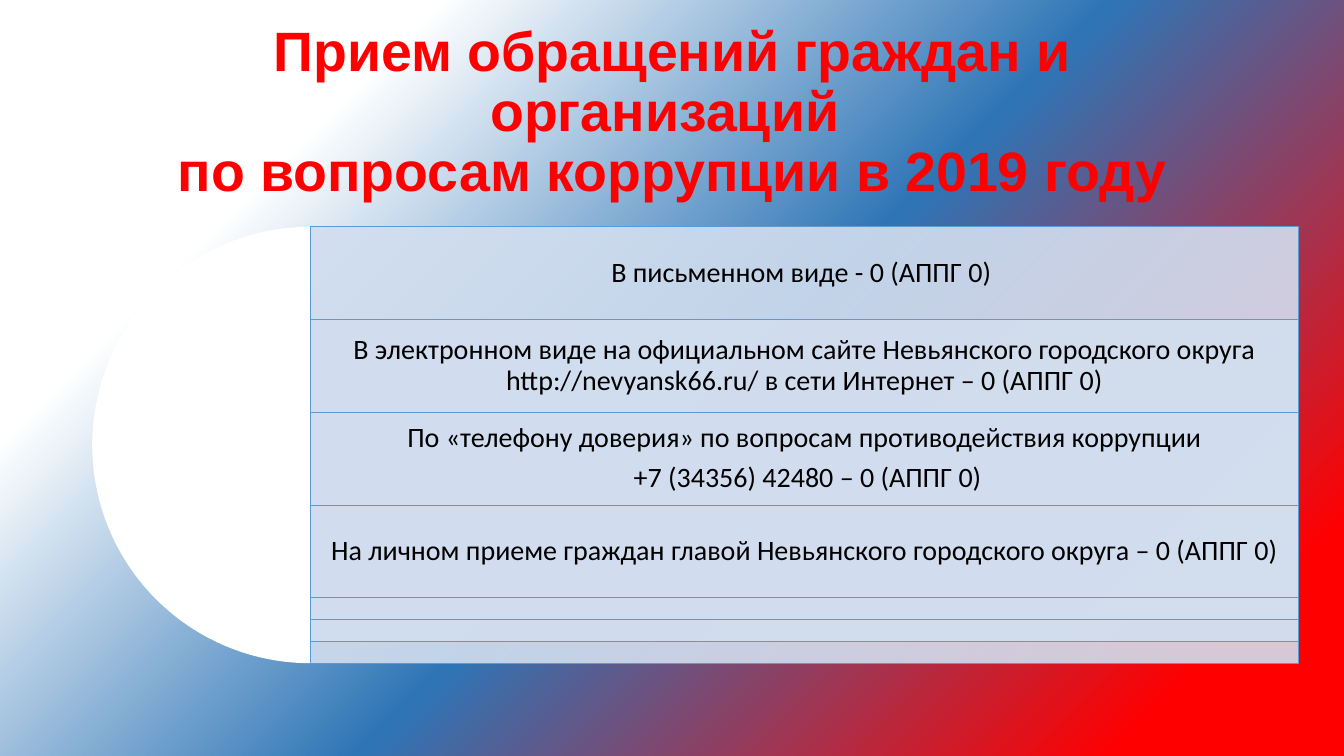
from lxml import etree
from pptx import Presentation
from pptx.dml.color import RGBColor
from pptx.enum.shapes import MSO_SHAPE
from pptx.enum.text import MSO_ANCHOR, MSO_AUTO_SIZE, PP_ALIGN
from pptx.oxml import parse_xml
from pptx.oxml.ns import nsdecls, qn
from pptx.util import Inches, Pt

COLORS = {
    "white": "FFFFFF",
    "blue": "2E75B6",
    "red": "FF0000",
    "band": "D2DEEF",
    "border": "5B9BD5",
    "text": "000000",
}
TITLE = ["Прием обращений граждан и организаций ", "по вопросам коррупции в 2019 году"]
CHANNELS = [
    ["В письменном виде - 0 (АППГ 0) "],
    ["В электронном виде на официальном сайте Невьянского городского округа "
     "http://nevyansk66.ru/ в сети Интернет – 0 (АППГ 0)"],
    ["По «телефону доверия» по вопросам противодействия коррупции",
     " +7 (34356) 42480 – 0 (АППГ 0)"],
    ["На личном приеме граждан главой Невьянского городского округа – 0 (АППГ 0)"],
]


def rgb(name):
    return RGBColor.from_string(COLORS[name])


def place(sp, x, y, w, h):
    sp.left, sp.top, sp.width, sp.height = (Inches(v) for v in (x, y, w, h))


def add_run(p, text, font, size, color, bold=False):
    r = p.add_run()
    r.text = text
    r.font.name = font
    r.font.size = Pt(size)
    r.font.bold = bold
    r.font.color.rgb = rgb(color)


def set_background(s, stops, angle):
    s.background.fill.gradient()
    grad = s.background._cSld.find(".//" + qn("a:gradFill"))
    gs = "".join(
        f'<a:gs pos="{pos * 1000}"><a:srgbClr val="{COLORS[name]}"/></a:gs>'
        for pos, name in stops)
    new = parse_xml(
        f'<a:gradFill {nsdecls("a")} rotWithShape="1"><a:gsLst>{gs}</a:gsLst>'
        f'<a:lin ang="{angle * 60000}" scaled="0"/></a:gradFill>')
    grad.getparent().replace(grad, new)


def add_title(s, x, y, w, h):
    sp = s.shapes.title
    place(sp, x, y, w, h)
    tf = sp.text_frame
    tf.word_wrap = True
    tf.auto_size = MSO_AUTO_SIZE.NONE
    tf.vertical_anchor = MSO_ANCHOR.MIDDLE
    p = tf.paragraphs[0]
    p.alignment = PP_ALIGN.CENTER
    p.line_spacing = 0.9
    for i, line in enumerate(TITLE):
        if i:
            p.add_line_break()
        add_run(p, line, "Arial", 39.6, "red", True)


def add_solid(shapes, kind, color, x, y, w, h):
    sp = shapes.add_shape(kind, *(Inches(v) for v in (x, y, w, h)))
    sp.shadow.inherit = False
    sp.fill.solid()
    sp.fill.fore_color.rgb = rgb(color)
    return sp


def add_half_disc(shapes, center, y, size):
    sp = add_solid(shapes, MSO_SHAPE.PIE, "white", center - size / 2, y, size, size)
    sp.adjustments[0] = 54
    sp.adjustments[1] = 162
    sp.line.fill.background()


def add_band(shapes, x, y, w, h):
    sp = add_solid(shapes, MSO_SHAPE.RECTANGLE, "band", x, y, w, h)
    sp.line.color.rgb = rgb("border")
    sp.line.width = Pt(0.5)
    color = sp._element.spPr.find(qn("a:solidFill"))[0]
    etree.SubElement(color, qn("a:alpha"), val="90000")


def add_label(shapes, lines, x, y, w, h):
    sp = shapes.add_textbox(*(Inches(v) for v in (x, y, w, h)))
    tf = sp.text_frame
    tf.word_wrap = True
    tf.vertical_anchor = MSO_ANCHOR.MIDDLE
    tf.margin_left = tf.margin_right = tf.margin_top = tf.margin_bottom = Inches(0.08)
    for i, line in enumerate(lines):
        p = tf.add_paragraph() if i else tf.paragraphs[0]
        p.alignment = PP_ALIGN.CENTER
        p.line_spacing = 0.9
        p.space_after = Pt(7)
        add_run(p, line, "Calibri", 20, "text")


def add_target_list(s, x, y, w, h, row):
    shapes = s.shapes.add_group_shape().shapes
    shrink = (h - row) / (len(CHANNELS) - 1)
    for i, lines in enumerate(CHANNELS):
        top, size = y + i * row, h - i * shrink
        add_half_disc(shapes, x, top, size)
        add_band(shapes, x, top, w, size)
        add_label(shapes, lines, x, top, w, row)


def main():
    prs = Presentation()
    prs.slide_width, prs.slide_height = Inches(13.33), Inches(7.5)
    s = prs.slides.add_slide(prs.slide_layouts[5])
    set_background(s, [(21, "white"), (53, "blue"), (89, "red")], 45)
    add_title(s, 0.92, 0.4, 11.5, 1.45)
    add_target_list(s, 3.08, 2.25, 9.8, 4.33, 0.92)
    prs.save("out.pptx")


if __name__ == "__main__":
    main()
